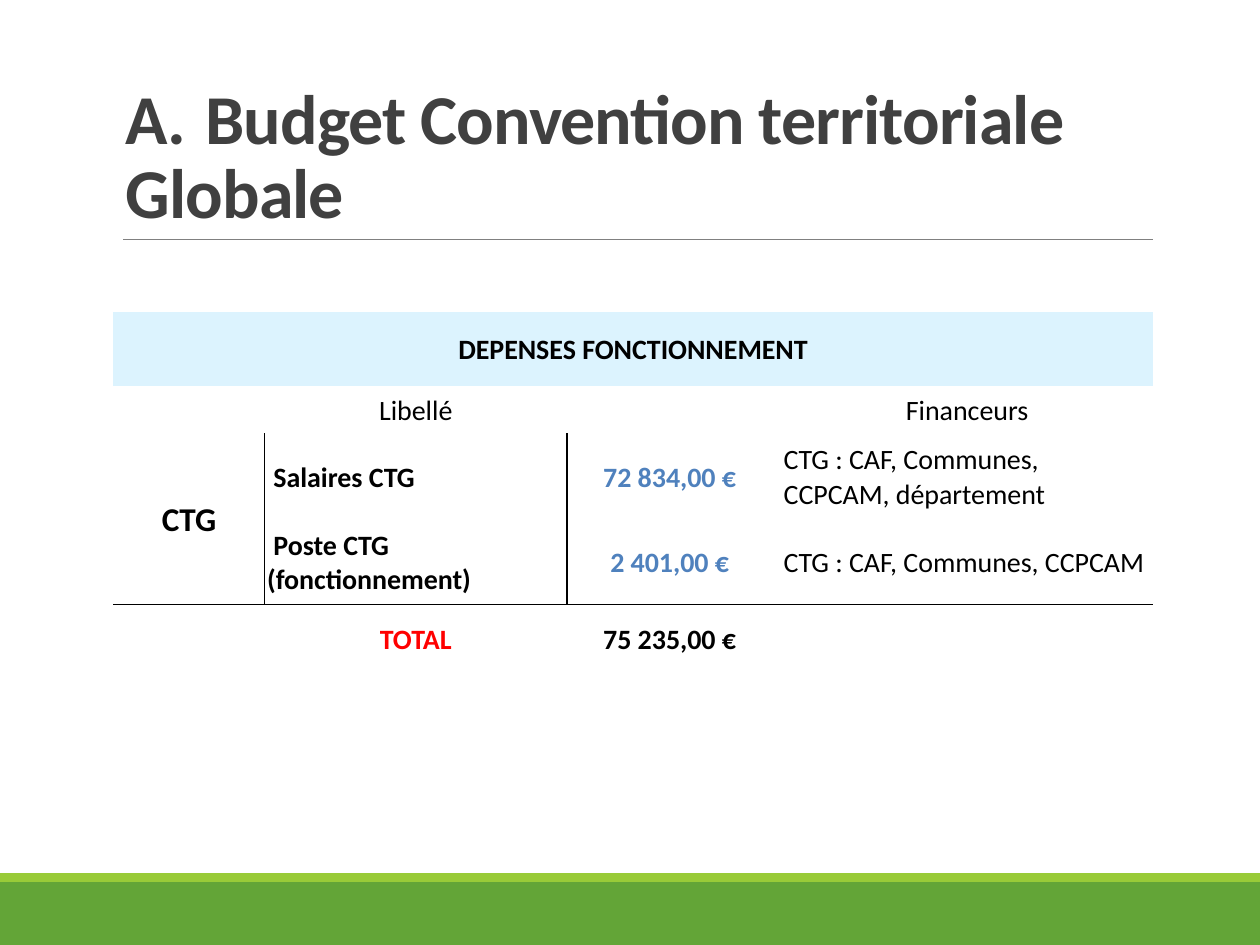
from typing import NamedTuple

from lxml.etree import SubElement
from pptx import Presentation
from pptx.dml.color import RGBColor
from pptx.enum.shapes import MSO_CONNECTOR, MSO_SHAPE
from pptx.enum.text import MSO_ANCHOR, PP_ALIGN
from pptx.oxml.ns import qn
from pptx.util import Inches, Pt

FONT = "Calibri"
BLACK = RGBColor(0x00, 0x00, 0x00)
TITLE_GREY = RGBColor(0x40, 0x40, 0x40)
RULE_GREY = RGBColor(0x80, 0x80, 0x80)
DARK_GREEN = RGBColor(0x63, 0xA5, 0x37)
LIGHT_GREEN = RGBColor(0x99, 0xCB, 0x38)
PALE_BLUE = RGBColor(0xDC, 0xF3, 0xFE)
AMOUNT_BLUE = RGBColor(0x4F, 0x81, 0xBD)
RED = RGBColor(0xFF, 0x00, 0x00)

NO_STYLE = "{2D5ABB26-0587-4C30-8999-92F81FD0307C}"
COLUMN_WIDTHS = (1.2, 2.4, 1.7, 2.95)
ROW_HEIGHTS = (0.58, 0.38, 0.68, 0.68, 0.54)
CTG_ROWS = (2, 3)
TOTAL_ROW = 4


class Band(NamedTuple):
    top: float
    height: float
    color: RGBColor


class Entry(NamedTuple):
    row: int
    column: int
    text: str
    bold: bool = True
    color: RGBColor = BLACK
    size: float = 16
    align: PP_ALIGN = PP_ALIGN.CENTER
    indent: float = 0
    right_margin: float = 0.02


BANDS = (Band(7, 0.5, DARK_GREEN), Band(6.93, 0.07, LIGHT_GREEN))

LEFT = PP_ALIGN.LEFT
LABEL = {"align": LEFT, "indent": 0.05}
AMOUNT = {"right_margin": 0.09}
FUNDER = {"align": LEFT, "bold": False}
ENTRIES = (
    Entry(0, 0, "DEPENSES FONCTIONNEMENT"),
    Entry(1, 1, "Libellé", bold=False),
    Entry(1, 3, "Financeurs", bold=False),
    Entry(2, 0, "CTG", size=19),
    Entry(2, 1, "Salaires CTG", **LABEL),
    Entry(2, 2, "72 834,00 €", color=AMOUNT_BLUE, **AMOUNT),
    Entry(2, 3, "CTG : CAF, Communes, CCPCAM, département", **FUNDER),
    Entry(3, 1, "Poste CTG (fonctionnement)", **LABEL),
    Entry(3, 2, "2 401,00 €", color=AMOUNT_BLUE, **AMOUNT),
    Entry(3, 3, "CTG : CAF, Communes, CCPCAM", **FUNDER),
    Entry(4, 1, "TOTAL", color=RED),
    Entry(4, 2, "75 235,00 €", **AMOUNT),
)


def add_text(paragraph, text: str, *, size: float, color: RGBColor = BLACK,
             bold: bool = True, spacing: float = 0) -> None:
    """Append a formatted run; spacing is the letter spacing in points."""
    run = paragraph.add_run()
    run.text = text
    font = run.font
    font.name, font.size, font.bold = FONT, Pt(size), bold
    font.color.rgb = color
    if spacing:
        run._r.get_or_add_rPr().set("spc", str(round(spacing * 100)))


def add_band(slide, band: Band) -> None:
    bar = slide.shapes.add_shape(MSO_SHAPE.RECTANGLE, 0, Inches(band.top),
                                 Inches(10), Inches(band.height))
    bar.shadow.inherit = False
    bar.fill.solid()
    bar.fill.fore_color.rgb = band.color
    bar.line.fill.background()


def add_title_rule(slide) -> None:
    rule = slide.shapes.add_connector(MSO_CONNECTOR.STRAIGHT, Inches(0.98), Inches(1.9),
                                      Inches(9.15), Inches(1.9))
    rule.line.color.rgb = RULE_GREY
    rule.line.width = Pt(0.5)
    SubElement(rule._element.spPr, qn("a:effectLst"))


def add_title(slide) -> None:
    frame = slide.shapes.add_textbox(Inches(0.9), Inches(0.31),
                                     Inches(8.25), Inches(1.59)).text_frame
    frame.word_wrap = True
    frame.vertical_anchor = MSO_ANCHOR.BOTTOM
    heading = frame.paragraphs[0]
    heading.line_spacing = 0.85
    heading.space_after = Pt(6)
    for text, size in (("A.", 40), (" ", 48),
                       ("Budget Convention territoriale Globale", 40)):
        add_text(heading, text, size=size, color=TITLE_GREY, spacing=-0.5)


def add_border(cell, side: str) -> None:
    """Draw a 1 pt black border; side is L, R, T or B."""
    line = SubElement(cell._tc.get_or_add_tcPr(), qn(f"a:ln{side}"), w=str(Pt(1)))
    fill = SubElement(line, qn("a:solidFill"))
    SubElement(fill, qn("a:srgbClr"), val=str(BLACK))


def border_sides(row: int, column: int) -> str:
    sides = ""
    if row in CTG_ROWS and column < 2:
        sides += "RL"[column]
    if row == TOTAL_ROW:
        sides += "T"
    if row == TOTAL_ROW - 1:
        sides += "B"
    return sides


def format_cell(cell, row: int, column: int) -> None:
    for side in border_sides(row, column):
        add_border(cell, side)
    if row == 0:
        cell.fill.solid()
        cell.fill.fore_color.rgb = PALE_BLUE
    else:
        cell.fill.background()
    cell.vertical_anchor = MSO_ANCHOR.MIDDLE
    cell.margin_left = cell.margin_right = cell.margin_top = Inches(0.02)
    cell.margin_bottom = 0
    cell.text_frame.paragraphs[0].font.size = Pt(16)


def fill_entry(cell, entry: Entry) -> None:
    cell.margin_right = Inches(entry.right_margin)
    paragraph = cell.text_frame.paragraphs[0]
    paragraph.alignment = entry.align
    if entry.indent:
        paragraph._p.get_or_add_pPr().set("indent", str(Inches(entry.indent)))
    add_text(paragraph, entry.text, size=entry.size, color=entry.color, bold=entry.bold)


def add_budget_table(slide) -> None:
    budget = slide.shapes.add_table(len(ROW_HEIGHTS), len(COLUMN_WIDTHS),
                                    Inches(0.9), Inches(2.48), Inches(sum(COLUMN_WIDTHS)),
                                    Inches(sum(ROW_HEIGHTS))).table
    budget.first_row = budget.horz_banding = False
    budget._tbl.tblPr.find(qn("a:tableStyleId")).text = NO_STYLE
    for column, width in zip(budget.columns, COLUMN_WIDTHS):
        column.width = Inches(width)
    for row, height in zip(budget.rows, ROW_HEIGHTS):
        row.height = Inches(height)
    for row in range(len(ROW_HEIGHTS)):
        for column in range(len(COLUMN_WIDTHS)):
            format_cell(budget.cell(row, column), row, column)
    budget.cell(0, 0).merge(budget.cell(0, 3))
    budget.cell(CTG_ROWS[0], 0).merge(budget.cell(CTG_ROWS[-1], 0))
    for entry in ENTRIES:
        fill_entry(budget.cell(entry.row, entry.column), entry)


def main() -> None:
    deck = Presentation()
    deck.slide_width, deck.slide_height = Inches(10), Inches(7.5)
    slide = deck.slides.add_slide(deck.slide_layouts[6])
    for band in BANDS:
        add_band(slide, band)
    add_title_rule(slide)
    add_title(slide)
    add_budget_table(slide)
    deck.save("out.pptx")


if __name__ == "__main__":
    main()
